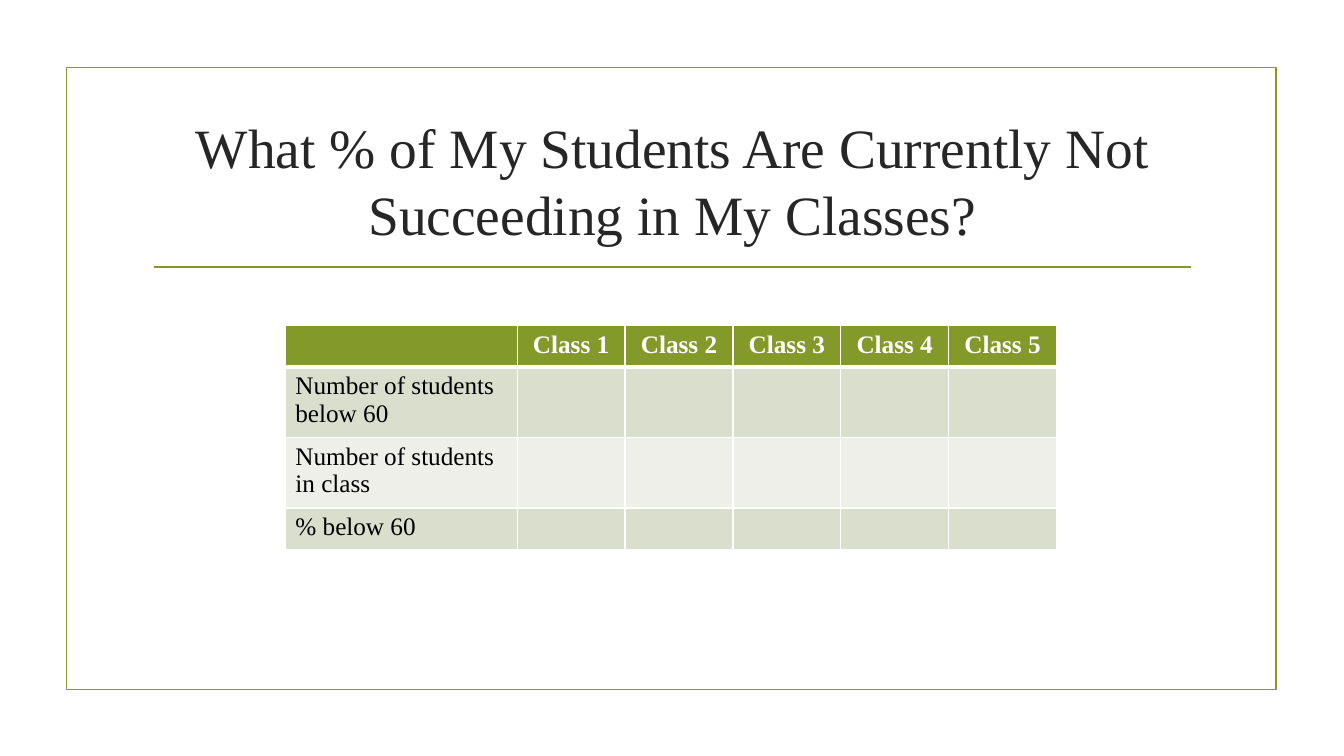
from lxml import etree
from pptx import Presentation
from pptx.dml.color import RGBColor
from pptx.enum.shapes import MSO_CONNECTOR, MSO_SHAPE
from pptx.enum.text import MSO_ANCHOR, PP_ALIGN
from pptx.oxml.ns import qn
from pptx.util import Inches, Pt

CENTER, LEFT = PP_ALIGN.CENTER, PP_ALIGN.LEFT
MIDDLE = MSO_ANCHOR.MIDDLE
RECTANGLE, STRAIGHT = MSO_SHAPE.RECTANGLE, MSO_CONNECTOR.STRAIGHT

COLORS = {
    "green": "83992A",
    "title": "262626",
    "text": "000000",
    "white": "FFFFFF",
    "dark band": "D9DECD",
    "light band": "EDEFE8",
}
FONT = "Times New Roman"
LINE_WIDTH = Pt(1.25)


def write_text(frame, text, size=18, color="text", bold=False, align=LEFT):
    paragraph = frame.paragraphs[0]
    paragraph.text = text
    paragraph.alignment = align
    font = paragraph.runs[0].font
    font.name, font.size, font.bold = FONT, Pt(size), bold
    font.color.rgb = RGBColor.from_string(COLORS[color])


def add_cell_borders(cell, bottom_width):
    properties = cell._tc.get_or_add_tcPr()
    for side, width in (("L", 1), ("R", 1), ("T", 1), ("B", bottom_width)):
        line = etree.SubElement(properties, qn(f"a:ln{side}"), w=str(Pt(width)))
        fill = etree.SubElement(line, qn("a:solidFill"))
        etree.SubElement(fill, qn("a:srgbClr"), val=COLORS["white"])


presentation = Presentation()
presentation.slide_width, presentation.slide_height = Inches(13.33), Inches(7.5)
slide = presentation.slides.add_slide(presentation.slide_layouts[6])
green = RGBColor.from_string(COLORS["green"])

# Frame and title rule
frame = slide.shapes.add_shape(
    RECTANGLE, Inches(0.66), Inches(0.67), Inches(12), Inches(6.17))
frame.shadow.inherit = False
frame.fill.background()
frame.line.color.rgb = green
frame.line.width = LINE_WIDTH

rule = slide.shapes.add_connector(
    STRAIGHT, Inches(1.53), Inches(2.65), Inches(11.81), Inches(2.65))
rule.line.color.rgb = green
rule.line.width = LINE_WIDTH
etree.SubElement(rule._element.spPr, qn("a:effectLst"))

# Title
title = slide.shapes.add_textbox(
    Inches(1.42), Inches(1.07), Inches(10.5), Inches(1.43)).text_frame
title.word_wrap = True
title.vertical_anchor = MIDDLE
write_text(title, "What % of My Students Are Currently Not Succeeding in My Classes?",
           size=39.6, color="title", align=CENTER)

# Table
class_count = 5
labels = ["", "Number of students below 60", "Number of students in class", "% below 60"]
column_widths = [2.3] + [1.07] * class_count
row_heights = [0.41, 0.65, 0.65, 0.41]
row_fills = ["green", "dark band", "light band", "dark band"]

table = slide.shapes.add_table(
    len(row_heights), len(column_widths), Inches(2.83), Inches(3.23),
    Inches(sum(column_widths)), Inches(sum(row_heights))).table
for column, width in zip(table.columns, column_widths):
    column.width = Inches(width)

for row_index, (row, height) in enumerate(zip(table.rows, row_heights)):
    row.height = Inches(height)
    for cell in row.cells:
        add_cell_borders(cell, bottom_width=3 if row_index == 0 else 1)
        cell.fill.solid()
        cell.fill.fore_color.rgb = RGBColor.from_string(COLORS[row_fills[row_index]])
    if labels[row_index]:
        write_text(row.cells[0].text_frame, labels[row_index])

for number in range(1, class_count + 1):
    write_text(table.cell(0, number).text_frame, f"Class {number}",
               color="white", bold=True, align=CENTER)

presentation.save("out.pptx")
